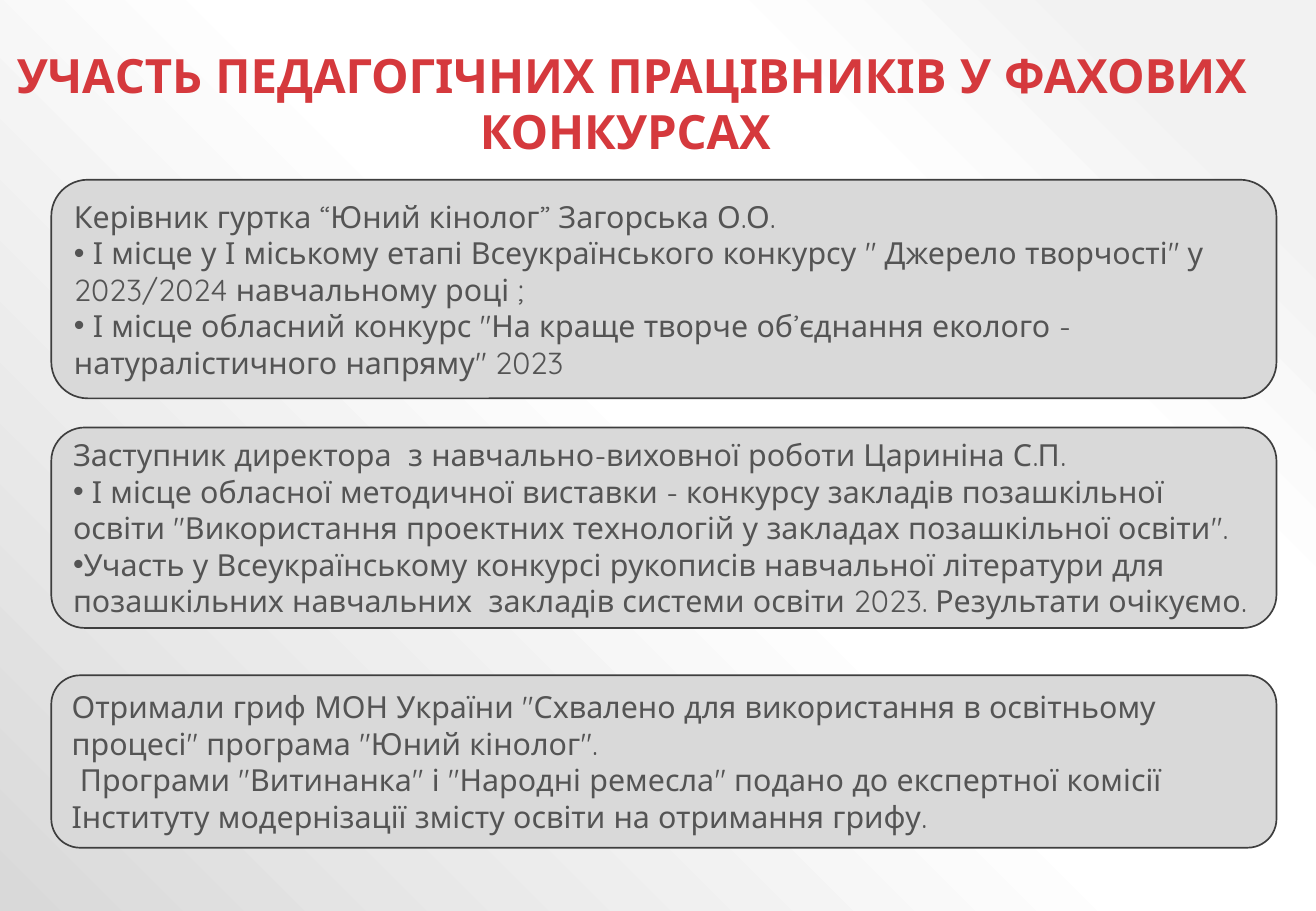
from lxml import etree
from pptx import Presentation
from pptx import util as u
from pptx.dml.color import RGBColor
from pptx.enum import shapes, text
from pptx.oxml import parse_xml
from pptx.oxml.ns import nsdecls, qn

RED = RGBColor(0xD5, 0x39, 0x3D)
INK = RGBColor(0x54, 0x54, 0x54)
PANEL = RGBColor(0xD9, 0xD9, 0xD9)
OUTLINE = RGBColor(0x3E, 0x3E, 0x3E)

deck = Presentation()
deck.slide_width, deck.slide_height = u.Inches(10.83), u.Inches(7.5)
slide = deck.slides.add_slide(deck.slide_layouts[6])


def share(left, top, width, height):
    return [int(part * side / 100) for part, side in zip(
        (left, top, width, height), (deck.slide_width, deck.slide_height) * 2)]


def write(frame, lines, size=18, color=INK, bold=False, align=text.PP_ALIGN.LEFT,
          anchor=text.MSO_ANCHOR.MIDDLE):
    frame.word_wrap = True
    frame.vertical_anchor = anchor
    for number, line in enumerate(lines):
        paragraph = frame.paragraphs[0] if number == 0 else frame.add_paragraph()
        paragraph.alignment = align
        if line.startswith("•"):
            properties = paragraph._p.get_or_add_pPr()
            etree.SubElement(properties, qn("a:buFont")).set("typeface", "Arial")
            etree.SubElement(properties, qn("a:buChar")).set("char", "•")
        run = paragraph.add_run()
        run.text = line.removeprefix("•")
        run.font.name = "Quicksand"
        run.font.size = u.Pt(size)
        run.font.bold = bold
        run.font.color.rgb = color


backdrop = slide.background.fill
backdrop.gradient()
gradient = slide.background._cSld.find(".//" + qn("a:gradFill"))
stops = "".join(
    f'<a:gs pos="{place * 1000}"><a:srgbClr val="{tone}"/></a:gs>'
    for place, tone in [(10, "F2F2F2"), (28, "FFFFFF"), (48, "FFFFFF"), (100, "D9D9D9")])
gradient.getparent().replace(gradient, parse_xml(
    f'<a:gradFill {nsdecls("a")} rotWithShape="1"><a:gsLst>{stops}</a:gsLst>'
    '<a:path path="circle"><a:fillToRect l="100000" b="100000"/></a:path></a:gradFill>'))

heading = slide.shapes.add_textbox(*share(-1.02, 4.4, 98.06, 13.87))
write(heading.text_frame, ["УЧАСТЬ ПЕДАГОГІЧНИХ ПРАЦІВНИКІВ У ФАХОВИХ КОНКУРСАХ "],
      size=28, color=RED, bold=True, align=text.PP_ALIGN.CENTER,
      anchor=text.MSO_ANCHOR.TOP)

achievements = [
    (19.73, 24, [
        "Керівник гуртка “Юний кінолог” Загорська О.О.",
        "• І місце у І міському етапі Всеукраїнського конкурсу \" Джерело творчості\" "
        "у 2023/2024 навчальному році ;",
        "• І місце обласний конкурс \"На краще творче об’єднання еколого - "
        "натуралістичного напряму\" 2023"]),
    (46.93, 22, [
        "Заступник директора  з навчально-виховної роботи Цариніна С.П.",
        "• І місце обласної методичної виставки - конкурсу закладів позашкільної освіти "
        "\"Використання проектних технологій у закладах позашкільної освіти\".",
        "•Участь у Всеукраїнському конкурсі рукописів навчальної літератури для "
        "позашкільних навчальних  закладів системи освіти 2023. Результати очікуємо."]),
    (74.13, 18.93, [
        "Отримали гриф МОН України \"Схвалено для використання в освітньому процесі\" "
        "програма \"Юний кінолог\".",
        " Програми \"Витинанка\" і \"Народні ремесла\" подано до експертної комісії "
        "Інституту модернізації змісту освіти на отримання грифу."]),
]
for top, height, lines in achievements:
    panel = slide.shapes.add_shape(
        shapes.MSO_SHAPE.ROUNDED_RECTANGLE, *share(3.9, top, 93.1, height))
    panel.shadow.inherit = False
    panel.fill.solid()
    panel.fill.fore_color.rgb = PANEL
    panel.line.color.rgb = OUTLINE
    panel.line.width = u.Pt(1)
    write(panel.text_frame, lines)

deck.save("out.pptx")
